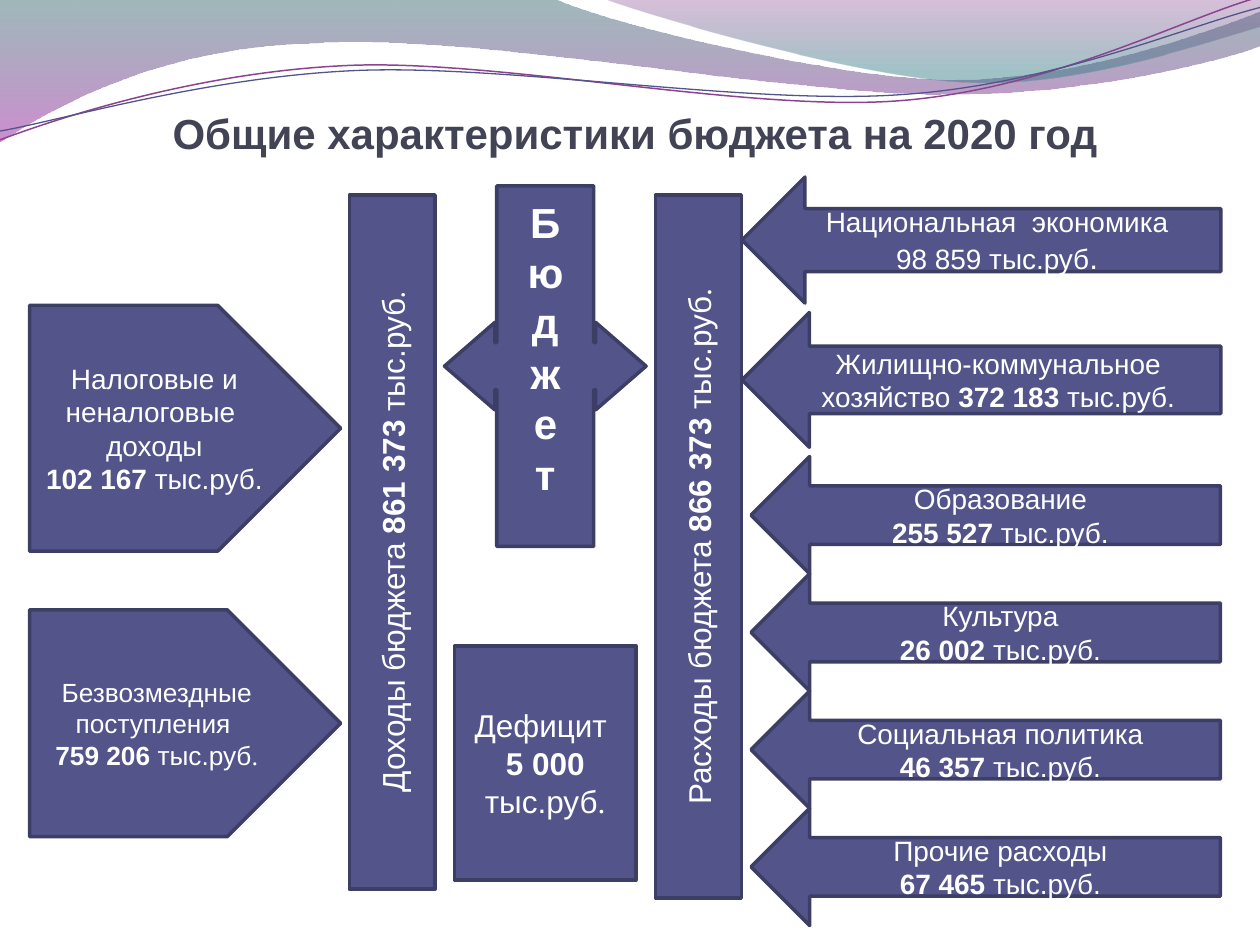
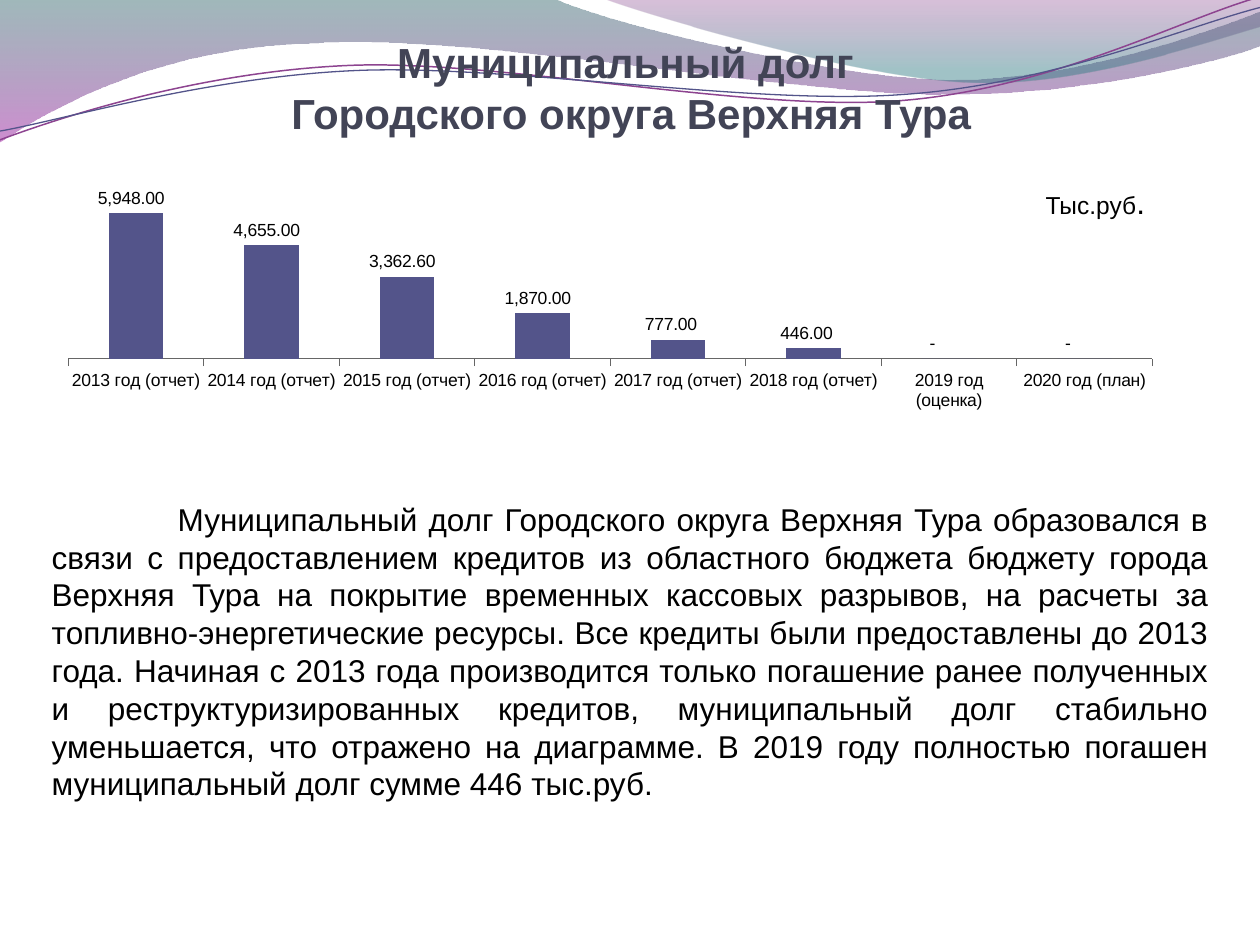
import math

from lxml import etree
from pptx import Presentation
from pptx import util as u
from pptx.chart.data import CategoryChartData
from pptx.dml.color import RGBColor
from pptx.enum import chart as charts, shapes, text
from pptx.oxml.ns import qn

Pt = u.Pt
COLORS = {
    "title": "424456", "block": "53548A", "edge": "3D3E66",
    "white": "FFFFFF", "black": "000000", "axis": "666666",
    "teal": "2D6368", "violet": "A530A9", "plum": "7F2F82",
    "aqua": "2F7B82", "curve": "8D4490",
}
FONT = "Arial"
NUMBER_FORMAT = ('_-* #,##0.00_р_._-;\\-* #,##0.00_р_._-;'
                 '_-* "-"??_р_._-;_-@_-')
BOLD = {"bold": True}
TIMES = {"font": "Times New Roman"}
CURVE_TILT = -2.7

# Wave outlines: a pair is a corner, six numbers are a cubic curve
BACK_WAVE = [
    (0, 0), (316.8, -0.7), (342.7, 12.2, 478.1, 45.4, 545.8, 45.4),
    (614.2, 45.4, 689.8, 18.7, 720, 6.5), (720.7, 25.9),
    (707.8, 31.7, 626.4, 54.7, 537.1, 54),
    (447.8, 54, 275, 20.2, 185, 24.5), (92.9, 25.9, 33.1, 59.8, -0.7, 81.4),
    (0, 0),
]
FRONT_WAVE = [
    (344.9, -0.7), (366.5, 7.9, 491, 44.6, 553.7, 46.8),
    (616.3, 49.7, 691.9, 23, 720, 15.1), (720, 0), (344.9, -0.7),
]
UPPER_CURVE = [
    (0, 79.9), (34.6, 67, 113.8, 41, 199.4, 37.4),
    (284.4, 33.8, 427, 64.1, 513.4, 57.6),
    (599.8, 51.1, 675.4, 10.8, 718.6, -1.4),
]
LOWER_CURVE = [
    (0, 74.9), (33.8, 69.1, 118.1, 43.9, 203.8, 40.3),
    (290.2, 36.7, 429.8, 60.5, 516.2, 54),
    (601.9, 48.2, 677.5, 15.1, 720, 4.3),
]

DEBT = {
    "2013 год (отчет)": 5948, "2014 год (отчет)": 4655,
    "2015 год (отчет)": 3362.6, "2016 год (отчет)": 1870,
    "2017 год (отчет)": 777, "2018 год (отчет)": 446,
    "2019 год (оценка)": 0, "2020 год (план)": 0,
}
DEBT_TEXT = (
    "Муниципальный долг Городского округа Верхняя Тура образовался в связи с "
    "предоставлением кредитов из областного бюджета бюджету города Верхняя Тура "
    "на покрытие временных кассовых разрывов, на расчеты за "
    "топливно-энергетические ресурсы. Все кредиты были предоставлены до 2013 "
    "года. Начиная с 2013 года производится только погашение ранее полученных и "
    "реструктуризированных кредитов, муниципальный долг стабильно уменьшается, "
    "что отражено на диаграмме. В 2019 году полностью погашен муниципальный долг "
    "сумме 446 тыс.руб."
)


def rgb(name):
    return RGBColor.from_string(COLORS[name])


def style_font(font, size, color, name=FONT, bold=False):
    font.size, font.name, font.bold = Pt(size), name, bold
    font.color.rgb = rgb(color)


def write(frame, paragraphs, size, color, align, bold=False):
    """Fill a frame; each paragraph is a list of (text, overrides) runs."""
    frame.word_wrap = True
    for index, runs in enumerate(paragraphs):
        paragraph = frame.paragraphs[0] if index == 0 else frame.add_paragraph()
        paragraph.alignment = align
        for content, extra in runs:
            for line, part in enumerate(content.split("\n")):
                if line:
                    paragraph.add_line_break()
                if part:
                    run = paragraph.add_run()
                    run.text = part
                    style_font(run.font, extra.get("size", size), color,
                               extra.get("font", FONT), extra.get("bold", bold))


# Shared wave header
def rotate(point, center, degrees):
    angle = math.radians(degrees)
    dx, dy = point[0] - center[0], point[1] - center[1]
    return (center[0] + dx * math.cos(angle) - dy * math.sin(angle),
            center[1] + dx * math.sin(angle) + dy * math.cos(angle))


def add_outline(slide, outline, close, center=(0, 0), tilt=0):
    """Build the outline through all its points, then join triples into curves."""
    points = [rotate(segment[i:i + 2], center, -tilt)
              for segment in outline for i in range(0, len(segment), 2)]
    start, *rest = [(Pt(x), Pt(y)) for x, y in points]
    builder = slide.shapes.build_freeform(*start)
    builder.add_line_segments(rest, close=close)
    shape = builder.convert_to_shape()
    shape.rotation = tilt
    shape.shadow.inherit = False

    lines = iter(list(shape.element.iter(qn("a:lnTo"))))
    for segment in outline[1:]:
        first = next(lines)
        if len(segment) == 6:
            first.tag = qn("a:cubicBezTo")
            for line in (next(lines), next(lines)):
                first.append(line[0])
                line.getparent().remove(line)
    return shape


def add_wave(slide, outline, stops):
    shape = add_outline(slide, outline, close=True)
    shape.line.fill.background()
    shape.fill.gradient()
    shape.fill.gradient_angle = 270
    for stop, (position, color, _) in zip(shape.fill.gradient_stops, stops):
        stop.position = position
        stop.color.rgb = rgb(color)
    for node, (_, _, opacity) in zip(shape.element.spPr.iter(qn("a:srgbClr")), stops):
        etree.SubElement(node, qn("a:alpha")).set("val", str(opacity * 1000))
    return shape


def add_curve(slide, outline, center, color, width):
    shape = add_outline(slide, outline, False, center, CURVE_TILT)
    shape.fill.background()
    shape.line.color.rgb = rgb(color)
    shape.line.width = Pt(width)
    return shape


def add_header_to_layout(slide):
    """Draw the waves and move them behind the layout's placeholders."""
    waves = [
        add_wave(slide, BACK_WAVE, [(0, "teal", 45), (1, "violet", 55)]),
        add_wave(slide, FRONT_WAVE, [(0, "plum", 30), (0.8, "aqua", 45)]),
        add_curve(slide, UPPER_CURVE, (359.3, 41.4), "curve", 0.85),
        add_curve(slide, LOWER_CURVE, (359.6, 42.5), "block", 0.75),
    ]
    for index, wave in enumerate(waves, start=2):
        slide.slide_layout.shapes.element.insert(index, wave.element)


# Kinds of element
def place(shape, left, top, width, height):
    shape.left, shape.top = Pt(left), Pt(top)
    shape.width, shape.height = Pt(width), Pt(height)


def set_title(slide, content, box):
    title = slide.shapes.title
    place(title, *box)
    frame = title.text_frame
    frame.margin_left = frame.margin_right = frame.margin_bottom = 0
    frame.margin_top = Pt(3.6)
    frame.vertical_anchor = text.MSO_ANCHOR.BOTTOM
    frame.auto_size = text.MSO_AUTO_SIZE.NONE
    write(frame, [[(content, {})]], 24, "title", text.PP_ALIGN.CENTER, bold=True)


def add_block(slide, kind, box, paragraphs, size=16, direction=None):
    shape = slide.shapes.add_shape(kind, *map(Pt, box))
    shape.shadow.inherit = False
    shape.fill.solid()
    shape.fill.fore_color.rgb = rgb("block")
    shape.line.color.rgb = rgb("edge")
    shape.line.width = Pt(2)
    frame = shape.text_frame
    frame.vertical_anchor = text.MSO_ANCHOR.MIDDLE
    if direction:
        shape.element.txBody.bodyPr.set("vert", direction)
    write(frame, paragraphs, size, "white", text.PP_ALIGN.CENTER)
    return shape


def add_text(slide, box, runs, size, align):
    frame = slide.shapes.add_textbox(*map(Pt, box)).text_frame
    write(frame, [runs], size, "black", align)
    frame.auto_size = text.MSO_AUTO_SIZE.SHAPE_TO_FIT_TEXT
    return frame


def add_debt_chart(slide, box):
    data = CategoryChartData()
    data.categories = list(DEBT)
    data.add_series("Series 1", list(DEBT.values()))
    chart = slide.shapes.add_chart(charts.XL_CHART_TYPE.COLUMN_CLUSTERED,
                                   *map(Pt, box), data).chart
    chart.has_legend = chart.has_title = False
    style_font(chart.font, 10, "black")

    chart.value_axis.visible = False
    chart.value_axis.has_major_gridlines = False
    chart.value_axis.minimum_scale, chart.value_axis.maximum_scale = 0, 7000
    chart.category_axis.major_tick_mark = charts.XL_TICK_MARK.OUTSIDE
    chart.category_axis.format.line.color.rgb = rgb("axis")

    plot = chart.plots[0]
    plot.gap_width, plot.vary_by_categories = 150, False
    fill = plot.series[0].format.fill
    fill.solid()
    fill.fore_color.rgb = rgb("block")
    labels = plot.series[0].data_labels
    labels.show_value = True
    labels.position = charts.XL_LABEL_POSITION.OUTSIDE_END
    labels.number_format, labels.number_format_is_linked = NUMBER_FORMAT, False
    style_font(labels.font, 10, "black")

    # Fixed inner plot area
    area = chart.element.find(".//" + qn("c:plotArea"))
    for old in area.findall(qn("c:layout")):
        area.remove(old)
    layout = etree.Element(qn("c:layout"))
    manual = etree.SubElement(layout, qn("c:manualLayout"))
    for tag, value in (("layoutTarget", "inner"), ("xMode", "edge"), ("yMode", "edge"),
                       ("x", 0.017), ("y", 0.04), ("w", 0.966), ("h", 0.644)):
        etree.SubElement(manual, qn("c:" + tag)).set("val", str(value))
    area.insert(0, layout)


# Slides
def build_budget(slide):
    set_title(slide, "Общие характеристики бюджета на 2020 год", (36, 44.6, 653.8, 45.4))
    kinds = shapes.MSO_SHAPE

    budget = add_block(slide, kinds.LEFT_RIGHT_ARROW_CALLOUT, (254, 106.3, 115.2, 205.9),
                       [[("Бюджет", BOLD), (" ", {"size": 18, **TIMES})]],
                       24, "wordArtVert")
    for index, value in enumerate((0.233, 0.217, 0.25, 0.481)):
        budget.adjustments[index] = value

    # Totals
    for left, height, label, amount, dot in (
            (199.6, 396.7, "Доходы", "861 373 ", {"font": "Cambria"}),
            (374.6, 401.8, "Расходы", "866 373 ", TIMES)):
        add_block(slide, kinds.RECTANGLE, (left, 111.4, 49, height),
                  [[(label + " бюджета ", {}), (amount, BOLD), ("тыс.руб", {}),
                    (".", dot)]], 18, "vert270")

    # Income
    add_block(slide, kinds.PENTAGON, (16.9, 174.5, 177.8, 140.4),
              [[("Налоговые и неналоговые  доходы", {})],
               [("102 167 ", BOLD), ("тыс.руб.", {})]])
    add_block(slide, kinds.PENTAGON, (16.9, 348.5, 177.8, 129.6),
              [[("Безвозмездные поступления \n", {}), ("759 206 ", BOLD),
                ("тыс.руб", {}), (".", TIMES)]], 15)

    # Spending
    add_block(slide, kinds.LEFT_ARROW, (424, 101.2, 273.6, 72),
              [[("Национальная  экономика", {})],
               [("98 859 тыс.руб", {}), (".", {"size": 18})]])
    add_block(slide, kinds.LEFT_ARROW, (424, 178.6, 273.6, 77),
              [[("Жилищно-коммунальное хозяйство ", {}), ("372 183 ", BOLD),
                ("тыс.руб.", {})]])
    for index, (label, amount) in enumerate((
            ("Образование", "255 527 "), ("Культура", "26 002 "),
            ("Социальная политика", "46 357 "), ("Прочие расходы", "67 465 "))):
        add_block(slide, kinds.LEFT_ARROW, (429.2, 260.9 + 67 * index, 268.2, 67),
                  [[(label, {})], [(amount, BOLD), ("тыс.руб.", {})]])

    add_block(slide, kinds.RECTANGLE, (259.7, 369.1, 103.7, 133.9),
              [[("Дефицит \n", {}), ("5 000 ", BOLD), ("тыс.руб", {}), (".", TIMES)]], 18)


def build_debt(slide):
    set_title(slide, "Муниципальный долг \nГородского округа Верхняя Тура",
              (33.8, 11, 653.8, 67.7))
    frame = add_text(slide, (22.5, 281.3, 675.2, 181.4), [(DEBT_TEXT, {})], 18,
                     text.PP_ALIGN.JUSTIFY)
    frame.vertical_anchor = text.MSO_ANCHOR.MIDDLE
    frame.paragraphs[0]._p.get_or_add_pPr().set("indent", str(Pt(72)))
    add_debt_chart(slide, (28.1, 101.2, 641.3, 151.9))
    add_text(slide, (590.4, 101.2, 90, 28.8), [("Тыс.руб", {}), (".", {"size": 18})], 14,
             text.PP_ALIGN.LEFT)


def main():
    presentation = Presentation()
    presentation.slide_width, presentation.slide_height = Pt(720), Pt(540)
    title_only = presentation.slide_layouts[5]
    budget, debt = (presentation.slides.add_slide(title_only) for _ in range(2))
    add_header_to_layout(budget)
    build_budget(budget)
    build_debt(debt)
    presentation.save("out.pptx")


if __name__ == "__main__":
    main()
